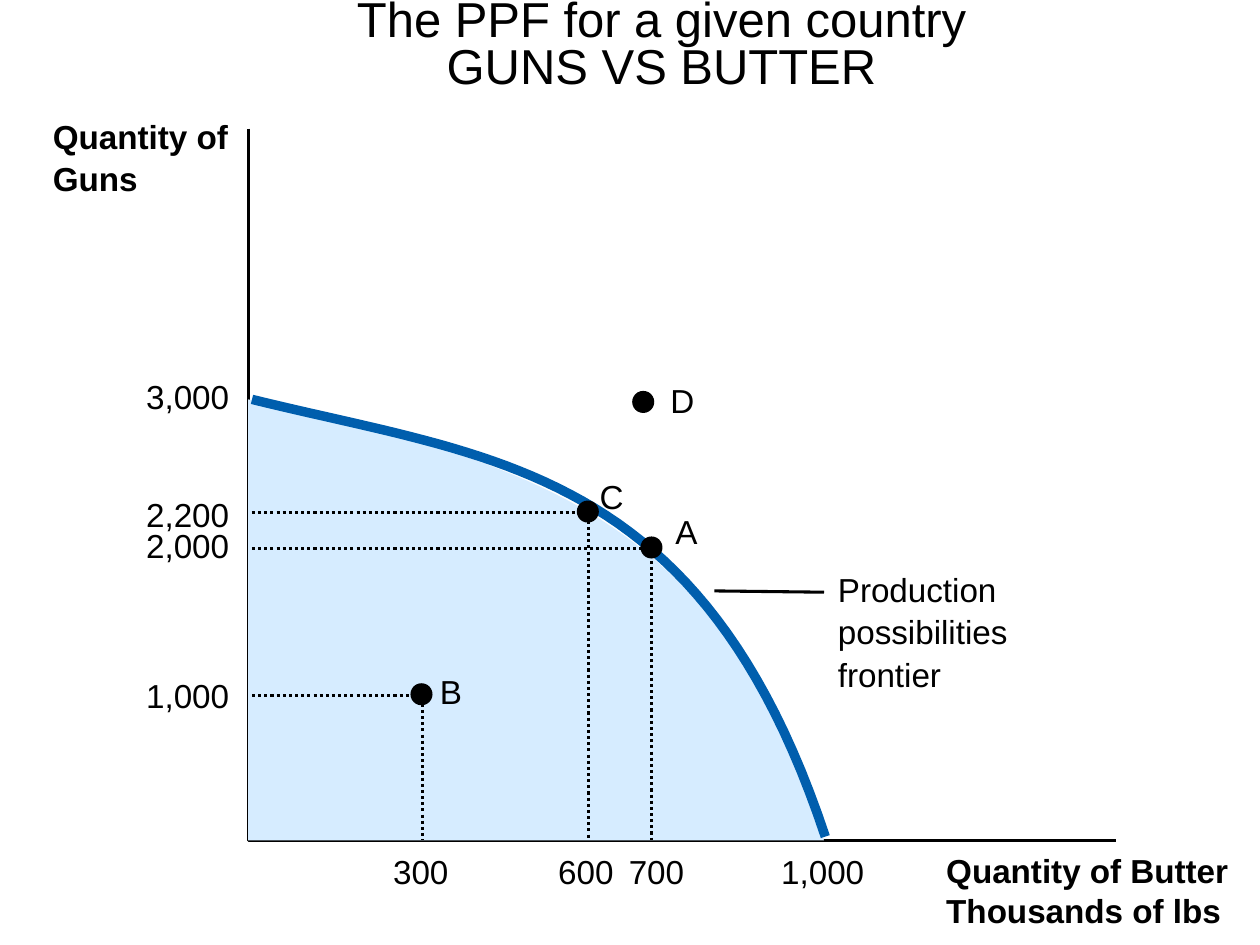
from lxml import etree
from pptx import Presentation
from pptx import util as u
from pptx.dml.color import RGBColor
from pptx.enum import dml, shapes, text
from pptx.oxml.ns import qn

# The slide is a grid of 100 columns by 75 rows, each cell 0.1 inch
CELL = u.Inches(0.1)
ORIGIN_X, ORIGIN_Y = 19.7, 66.7
GUIDE_X = 20
TICK_X, TICK_Y = 11.6, 67.6
DOT = 1.75
LABEL = {"size": u.Pt(19), "name": "Arial"}
BOLD = {**LABEL, "bold": True}
TITLE = {"size": u.Pt(28), "name": "Arial", "bold": False}


def grid(*cells):
    return [round(c * CELL) for c in cells]


def color(hex_string):
    return RGBColor.from_string(hex_string)


def set_font(font, fmt):
    for name, value in fmt.items():
        setattr(font, name, value)
    font.color.rgb = color("000000")


def set_line(line, hex_string="000000", width=1.75, dash=None):
    line.color.rgb = color(hex_string)
    line.width = u.Pt(width)
    if dash:
        line.dash_style = dash


def add_title(s, words):
    sp = s.shapes.title
    sp.left, sp.top, sp.width, sp.height = grid(7.5, 0, 90, 7.5)
    tf = sp.text_frame
    tf.auto_size = text.MSO_AUTO_SIZE.NONE
    tf.vertical_anchor = text.MSO_ANCHOR.MIDDLE
    tf.text = words
    p = tf.paragraphs[0]
    p.alignment = text.PP_ALIGN.CENTER
    p.line_spacing = 0.8
    for r in p.runs:
        set_font(r.font, TITLE)


def add_label(s, words, x, y, width, height=3.8, fmt=LABEL):
    tf = s.shapes.add_textbox(*grid(x, y, width, height)).text_frame
    tf.word_wrap = False
    tf.auto_size = text.MSO_AUTO_SIZE.SHAPE_TO_FIT_TEXT
    for side in ("left", "top", "right", "bottom"):
        setattr(tf, f"margin_{side}", 0)
    tf.text = words
    for p in tf.paragraphs:
        for r in p.runs:
            set_font(r.font, fmt)


def add_path(s, points, close=False):
    start, *rest = [grid(*point) for point in points]
    builder = s.shapes.build_freeform(*start, scale=1.0)
    builder.add_line_segments(rest, close=close)
    sp = builder.convert_to_shape()
    sp.shadow.inherit = False
    return sp


def add_outline(s, points, **line):
    sp = add_path(s, points)
    sp.fill.background()
    set_line(sp.line, **line)


def add_region(s, points, hex_string):
    sp = add_path(s, points, close=True)
    sp.fill.solid()
    sp.fill.fore_color.rgb = color(hex_string)
    sp.line.fill.background()


def curve(p0, p1, p2, p3, steps=48):
    """Points along a cubic Bezier curve."""
    def blend(a, b, c, d, t):
        v = 1 - t
        return v**3 * a + 3 * v * v * t * b + 3 * v * t * t * c + t**3 * d
    return [tuple(blend(*axis, i / steps) for axis in zip(p0, p1, p2, p3))
            for i in range(steps + 1)]


def add_guide(s, x, y):
    add_outline(s, [(GUIDE_X, y), (x, y), (x, ORIGIN_Y)],
                dash=dml.MSO_LINE.ROUND_DOT)


def add_dot(s, x, y):
    sp = s.shapes.add_shape(shapes.MSO_SHAPE.OVAL,
                            *grid(x - DOT / 2, y - DOT / 2, DOT, DOT))
    sp.shadow.inherit = False
    sp.fill.solid()
    sp.fill.fore_color.rgb = color("000000")
    sp.line.fill.background()


def add_leader(s, x1, y1, x2, y2):
    line = s.shapes.add_connector(shapes.MSO_CONNECTOR.STRAIGHT,
                                  *grid(x1, y1, x2, y2))
    set_line(line.line)
    etree.SubElement(line._element.spPr, qn("a:effectLst"))


def main():
    prs = Presentation()
    prs.slide_width, prs.slide_height = grid(100, 75)
    s = prs.slides.add_slide(prs.slide_layouts[5])
    add_title(s, "The PPF for a given country\vGUNS VS BUTTER")

    # Axes and their names
    add_outline(s, [(ORIGIN_X, 10.2), (ORIGIN_X, ORIGIN_Y), (88.6, ORIGIN_Y)])
    add_label(s, "Quantity of", 4.2, 9.2, 15.9, fmt=BOLD)
    add_label(s, "Guns", 4.2, 12.6, 6.8, 3.2, BOLD)
    add_label(s, "Quantity of Butter\nThousands of lbs", 75.1, 67.5, 22.5, 6.3, BOLD)

    # Attainable region and frontier
    edge = curve((65.4, ORIGIN_Y), (56.9, 41.7), (44.5, 37.2), (ORIGIN_X, 31.7))
    add_region(s, [(ORIGIN_X, ORIGIN_Y)] + edge, "D6ECFF")
    add_outline(s, curve((65.5, 66.4), (55.7, 36.9), (39, 36.4), (GUIDE_X, 31.7)),
                hex_string="005EAD", width=5.38)

    # Frontier callout
    add_leader(s, 56.7, 46.9, 65.4, 47)
    for row, (word, width) in enumerate(
            [("Production", 14.2), ("possibilities", 15.2), ("frontier", 9.7)]):
        add_label(s, word, 66.5, 45.2 + 3.35 * row, width)

    # Dotted guides to both axes
    for x, y in [(46.7, 40.7), (33.5, 55.2), (51.7, 43.5)]:
        add_guide(s, x, y)

    # Axis values
    for value, y in [("3,000", 29.9), ("2,200", 39.2), ("2,000", 41.7), ("1,000", 53.6)]:
        add_label(s, value, TICK_X, y, 8.1)
    for value, x, width in [("300", 31.2, 5.8), ("600", 44.3, 5.8),
                            ("700", 49.9, 5.8), ("1,000", 62, 8.1)]:
        add_label(s, value, x, TICK_Y, width)

    # Production points: name, dot centre, label corner
    for name, x, y, label_x, label_y in [("D", 51.05, 31.9, 53.2, 30.2),
                                         ("A", 51.7, 43.45, 53.6, 40.6),
                                         ("B", 33.45, 55.1, 34.9, 53.3),
                                         ("C", 46.65, 40.6, 47.6, 37.8)]:
        add_dot(s, x, y)
        add_label(s, name, label_x, label_y, 1.9, 3.2)

    prs.save("out.pptx")


if __name__ == "__main__":
    main()
